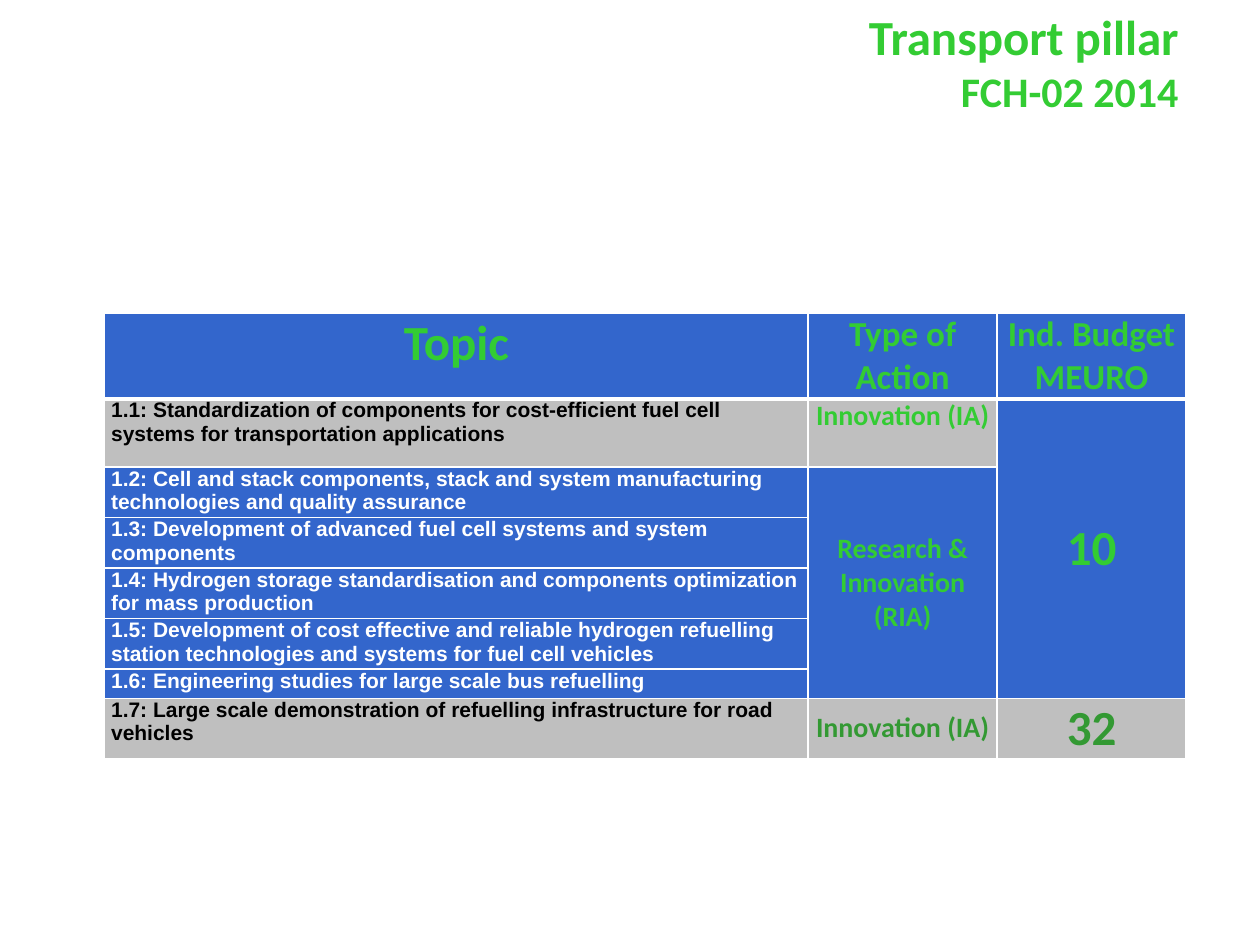
from lxml import etree
from pptx import Presentation
from pptx.dml.color import RGBColor
from pptx.enum import text
from pptx.oxml import ns
from pptx.util import Cm, Pt

GREEN = RGBColor(0x33, 0xCC, 0x33)
DARK_GREEN = RGBColor(0x33, 0x99, 0x33)
BLUE = RGBColor(0x33, 0x66, 0xCC)
GREY = RGBColor(0xBF, 0xBF, 0xBF)
BLACK = RGBColor(0, 0, 0)
WHITE = RGBColor(0xFF, 0xFF, 0xFF)
TOP, MIDDLE = text.MSO_ANCHOR.TOP, text.MSO_ANCHOR.MIDDLE
LEFT, CENTER, RIGHT = text.PP_ALIGN.LEFT, text.PP_ALIGN.CENTER, text.PP_ALIGN.RIGHT

TITLE = [("Transport pillar", 28), ("FCH-02 2014", 24)]
HEADERS = [("Topic", 28), ("Type of Action", 20), ("Ind. Budget\nMEURO", 20)]
TOPICS = [  # wording, row fill, text colour
    ("1.1: Standardization of components for cost-efficient fuel cell systems "
     "for transportation applications", GREY, BLACK),
    ("1.2: Cell and stack components, stack and system manufacturing "
     "technologies and quality assurance", BLUE, WHITE),
    ("1.3: Development of advanced fuel cell systems and system components", BLUE, WHITE),
    ("1.4: Hydrogen storage standardisation and components optimization "
     "for mass production", BLUE, WHITE),
    ("1.5: Development of cost effective and reliable hydrogen refuelling "
     "station technologies and systems for fuel cell vehicles", BLUE, WHITE),
    ("1.6: Engineering studies for large scale bus refuelling", BLUE, WHITE),
    ("1.7: Large scale demonstration of refuelling infrastructure for road vehicles",
     GREY, BLACK),
]
GROUPS = [  # first row, last row, column, wording, size, text colour, fill, anchor
    (1, 1, 1, "Innovation (IA)", 16, GREEN, GREY, TOP),
    (2, 6, 1, "Research & Innovation (RIA)", 16, GREEN, BLUE, MIDDLE),
    (7, 7, 1, "Innovation (IA)", 16, DARK_GREEN, GREY, MIDDLE),
    (1, 6, 2, "10", 28, GREEN, BLUE, MIDDLE),
    (7, 7, 2, "32", 28, DARK_GREEN, GREY, MIDDLE),
]
COLUMN_WIDTHS = [14.18, 3.81, 3.81]
ROW_HEIGHTS = [1.72, 1.38, 0.95, 0.95, 0.95, 1.01, 0.59, 1.21]


def style_font(font, size, color, name="Calibri"):
    font.name, font.size, font.bold = name, Pt(size), True
    font.color.rgb = color


def set_borders(cell, bottom_width):
    """Draw white borders; they must come before the cell's fill."""
    properties = cell._tc.get_or_add_tcPr()
    for side in "LRTB":
        width = bottom_width if side == "B" else 1
        line = etree.SubElement(properties, ns.qn(f"a:ln{side}"), w=str(Pt(width)))
        fill = etree.SubElement(line, ns.qn("a:solidFill"))
        etree.SubElement(fill, ns.qn("a:srgbClr"), val=str(WHITE))


def fill_cell(cell, wording, size, color, fill, align=CENTER, anchor=TOP,
              font_name="Calibri", inset=0.13):
    cell.fill.solid()
    cell.fill.fore_color.rgb = fill
    cell.margin_left = cell.margin_right = Cm(inset)
    cell.margin_top = cell.margin_bottom = 0
    cell.vertical_anchor = anchor
    cell.text_frame.text = wording
    for para in cell.text_frame.paragraphs:
        para.alignment = align
        for span in para.runs:
            style_font(span.font, size, color, font_name)


def add_title(page):
    box = page.shapes.add_textbox(Cm(2.11), Cm(0.13), Cm(21.9), Cm(2.21))
    frame = box.text_frame
    frame.word_wrap = True
    frame.vertical_anchor = MIDDLE
    para = frame.paragraphs[0]
    para.alignment = RIGHT
    para.text = "\v".join(wording for wording, _ in TITLE)
    for span, (_, size) in zip(para.runs, TITLE):
        style_font(span.font, size, GREEN)


def add_topic_table(page):
    frame = page.shapes.add_table(
        len(ROW_HEIGHTS), len(COLUMN_WIDTHS), Cm(2.11), Cm(6.32),
        Cm(sum(COLUMN_WIDTHS)), Cm(sum(ROW_HEIGHTS)))
    table = frame.table
    for column, width in zip(table.columns, COLUMN_WIDTHS):
        column.width = Cm(width)
    for index, (row, height) in enumerate(zip(table.rows, ROW_HEIGHTS)):
        row.height = Cm(height)
        for cell in row.cells:
            set_borders(cell, 3 if index == 0 else 1)

    for column, (wording, size) in enumerate(HEADERS):
        fill_cell(table.cell(0, column), wording, size, GREEN, BLUE, inset=0.18)
    for row, (wording, fill, color) in enumerate(TOPICS, start=1):
        fill_cell(table.cell(row, 0), wording, 12, color, fill, LEFT, font_name="Arial")
    for first, last, column, wording, size, color, fill, anchor in GROUPS:
        cell = table.cell(first, column)
        if last > first:
            cell.merge(table.cell(last, column))
        fill_cell(cell, wording, size, color, fill, anchor=anchor)


def main():
    deck = Presentation()
    deck.slide_width, deck.slide_height = Cm(25.4), Cm(19.05)
    page = deck.slides.add_slide(deck.slide_layouts[6])
    add_title(page)
    add_topic_table(page)
    deck.save("out.pptx")


if __name__ == "__main__":
    main()
